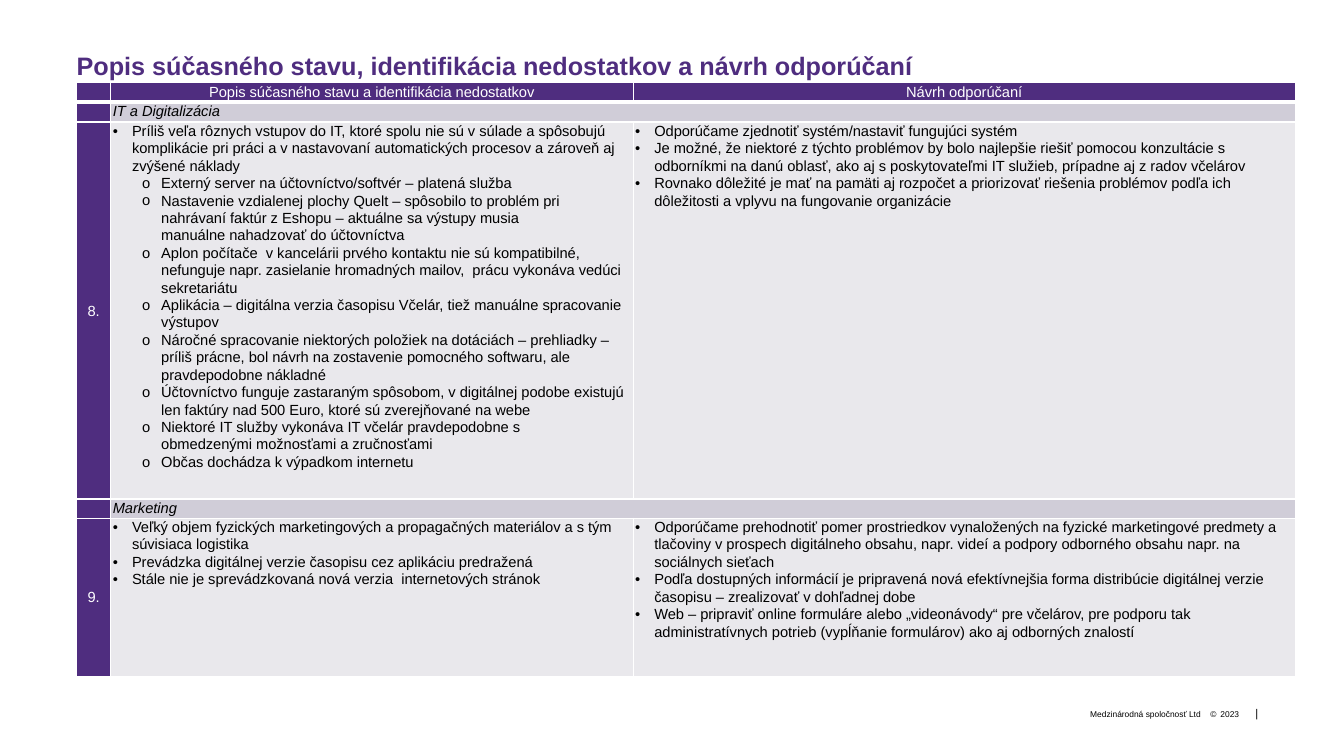
from lxml import etree
from pptx import Presentation
from pptx.dml.color import RGBColor
from pptx.enum.text import MSO_ANCHOR, PP_ALIGN
from pptx.oxml.ns import qn
from pptx.util import Pt

PX = 9144  # 100 px to the inch
TOP, MIDDLE, BOTTOM = MSO_ANCHOR.TOP, MSO_ANCHOR.MIDDLE, MSO_ANCHOR.BOTTOM
LEFT, CENTER, RIGHT = PP_ALIGN.LEFT, PP_ALIGN.CENTER, PP_ALIGN.RIGHT
FONT = "Arial"
COLORS = {"purple": "4F2D7F", "section": "D0CDD8", "body": "E9E8EC",
          "white": "FFFFFF", "black": "000000"}

COLUMN_WIDTHS = [34, 518, 657]
ROW_HEIGHTS = [19, 20, 374, 19, 157]
HEADERS = ["Popis súčasného stavu a identifikácia nedostatkov", "Návrh odporúčaní"]

# Kinds of line: bullet, left margin, hanging indent, level
LINE_KINDS = {"point": ("•", 19, -19, 0), "sub": ("o", 48, -19, 1), "more": (None, 48, 0, 1)}

# Section name, number, findings, recommendations
SECTIONS = [
    ("IT a Digitalizácia", "8.", [
        ("point", "Príliš veľa rôznych vstupov do IT, ktoré spolu nie sú v súlade a spôsobujú "
                  "komplikácie pri práci a v nastavovaní automatických procesov a zároveň aj "
                  "zvýšené náklady"),
        ("sub", "Externý server na účtovníctvo/softvér – platená služba"),
        ("sub", "Nastavenie vzdialenej plochy Quelt – spôsobilo to problém pri"),
        ("more", "nahrávaní faktúr z Eshopu – aktuálne sa výstupy musia"),
        ("more", "manuálne nahadzovať do účtovníctva"),
        ("sub", "Aplon počítače  v kancelárii prvého kontaktu nie sú kompatibilné, nefunguje "
                "napr. zasielanie hromadných mailov,  prácu vykonáva vedúci sekretariátu"),
        ("sub", "Aplikácia – digitálna verzia časopisu Včelár, tiež manuálne spracovanie výstupov"),
        ("sub", "Náročné spracovanie niektorých položiek na dotáciách – prehliadky – príliš "
                "prácne, bol návrh na zostavenie pomocného softwaru, ale pravdepodobne nákladné"),
        ("sub", "Účtovníctvo funguje zastaraným spôsobom, v digitálnej podobe existujú len "
                "faktúry nad 500 Euro, ktoré sú zverejňované na webe"),
        ("sub", "Niektoré IT služby vykonáva IT včelár pravdepodobne s"),
        ("more", "obmedzenými možnosťami a zručnosťami"),
        ("sub", "Občas dochádza k výpadkom internetu"),
    ], [
        ("point", "Odporúčame zjednotiť systém/nastaviť fungujúci systém"),
        ("point", "Je možné, že niektoré z týchto problémov by bolo najlepšie riešiť pomocou "
                  "konzultácie s odborníkmi na danú oblasť, ako aj s poskytovateľmi IT služieb, "
                  "prípadne aj z radov včelárov"),
        ("point", "Rovnako dôležité je mať na pamäti aj rozpočet a priorizovať riešenia problémov "
                  "podľa ich  dôležitosti a vplyvu na fungovanie organizácie"),
    ]),
    ("Marketing", "9.", [
        ("point", "Veľký objem fyzických marketingových a propagačných materiálov a s tým "
                  "súvisiaca logistika"),
        ("point", "Prevádzka digitálnej verzie časopisu cez aplikáciu predražená"),
        ("point", "Stále nie je sprevádzkovaná nová verzia  internetových stránok"),
    ], [
        ("point", "Odporúčame prehodnotiť pomer prostriedkov vynaložených na fyzické marketingové "
                  "predmety a tlačoviny v prospech digitálneho obsahu, napr. videí a podpory "
                  "odborného obsahu napr. na sociálnych sieťach"),
        ("point", "Podľa dostupných informácií je pripravená nová efektívnejšia forma distribúcie "
                  "digitálnej verzie časopisu – zrealizovať v dohľadnej dobe"),
        ("point", "Web – pripraviť online formuláre alebo „videonávody“ pre včelárov, pre podporu "
                  "tak administratívnych potrieb (vypĺňanie formulárov) ako aj odborných znalostí"),
    ]),
]


def rgb(name):
    return RGBColor.from_string(COLORS[name])


def style_font(paragraph, size, color, bold=False, italic=False):
    font = paragraph.font
    font.name, font.size, font.bold, font.italic = FONT, Pt(size), bold, italic
    font.color.rgb = rgb(color)


def set_bullet(paragraph, bullet, margin, indent):
    props = paragraph._p.get_or_add_pPr()
    props.set("marL", str(margin * PX))
    props.set("indent", str(indent * PX))
    if bullet:
        etree.SubElement(props, qn("a:buFont"), typeface=FONT)
        etree.SubElement(props, qn("a:buChar"), char=bullet)
    else:
        etree.SubElement(props, qn("a:buNone"))


def set_frame(frame, anchor, wrap):
    frame.margin_left = frame.margin_right = frame.margin_top = frame.margin_bottom = 0
    frame.vertical_anchor = anchor
    frame.word_wrap = wrap


def add_title(slide, text):
    title = slide.shapes.title
    title.left, title.top, title.width, title.height = (v * PX for v in (76, 30, 1024, 44))
    set_frame(title.text_frame, TOP, True)
    title.text_frame.text = text
    line = title.text_frame.paragraphs[0]
    line.alignment = LEFT
    line.line_spacing = Pt(36)
    style_font(line, 18, "purple", bold=True)


def add_footer_text(slide, text, left, top, width, height, size, bullet=None):
    box = slide.shapes.add_textbox(left * PX, top * PX, width * PX, height * PX)
    set_frame(box.text_frame, BOTTOM, False)
    line = box.text_frame.paragraphs[0]
    line.text = text
    line.alignment = RIGHT
    line.space_after = Pt(6)
    if bullet:
        set_bullet(line, bullet, 10, -10)
    style_font(line, size, "black")


def set_borders(cell, top=1, bottom=1):
    props = cell._tc.get_or_add_tcPr()
    for side, width in (("L", 1), ("R", 1), ("T", top), ("B", bottom)):
        border = etree.SubElement(props, qn(f"a:ln{side}"), w=str(Pt(width)))
        fill = etree.SubElement(border, qn("a:solidFill"))
        etree.SubElement(fill, qn("a:srgbClr"), val=COLORS["white"])


def fill_cell(cell, fill, lines=((None, ""),), color="black", align=LEFT, anchor=TOP,
              italic=False, side_margin=2, top=1, bottom=1):
    cell.margin_left = cell.margin_right = side_margin * PX
    cell.margin_top = cell.margin_bottom = 0
    cell.vertical_anchor = anchor
    set_borders(cell, top, bottom)
    cell.fill.solid()
    cell.fill.fore_color.rgb = rgb(fill)
    frame = cell.text_frame
    for number, (kind, text) in enumerate(lines):
        line = frame.add_paragraph() if number else frame.paragraphs[0]
        line.text = text
        line.alignment = align
        line.line_spacing = 1.07
        if kind:
            bullet, margin, indent, line.level = LINE_KINDS[kind]
            set_bullet(line, bullet, margin, indent)
        style_font(line, 10.5, color, italic=italic)


def add_findings_table(slide):
    table = slide.shapes.add_table(
        len(ROW_HEIGHTS), len(COLUMN_WIDTHS), 76 * PX, 82 * PX,
        sum(COLUMN_WIDTHS) * PX, sum(ROW_HEIGHTS) * PX).table
    table.first_row = table.horz_banding = False
    for column, width in zip(table.columns, COLUMN_WIDTHS):
        column.width = width * PX
    for row, height in zip(table.rows, ROW_HEIGHTS):
        row.height = height * PX

    # Header row
    for column, text in enumerate([""] + HEADERS):
        fill_cell(table.cell(0, column), "purple", [(None, text)], "white", CENTER, MIDDLE,
                  bottom=3)

    # A heading row and a content row for each section
    for index, (name, number, findings, advice) in enumerate(SECTIONS):
        heading, content = 2 * index + 1, 2 * index + 2
        top = 1 if index else 3
        fill_cell(table.cell(heading, 0), "purple", top=top)
        table.cell(heading, 1).merge(table.cell(heading, 2))
        fill_cell(table.cell(heading, 1), "section", [(None, name)], italic=True, top=top)
        fill_cell(table.cell(content, 0), "purple", [(None, number)], "white", CENTER, MIDDLE,
                  side_margin=0)
        fill_cell(table.cell(content, 1), "body", findings)
        fill_cell(table.cell(content, 2), "body", advice)


def main():
    deck = Presentation()
    deck.slide_width, deck.slide_height = 1333 * PX, 750 * PX
    slide = deck.slides.add_slide(deck.slide_layouts[5])

    # Footer
    add_footer_text(slide, "|", 1245, 701, 3, 13, 8)
    add_footer_text(slide, "2023", 1200, 698, 29, 16, 6, bullet="©")
    add_footer_text(slide, "Medzinárodná spoločnosť Ltd", 861, 698, 330, 16, 6)

    # Table and title
    add_findings_table(slide)
    add_title(slide, "Popis súčasného stavu, identifikácia nedostatkov a návrh odporúčaní")
    deck.save("out.pptx")


if __name__ == "__main__":
    main()
